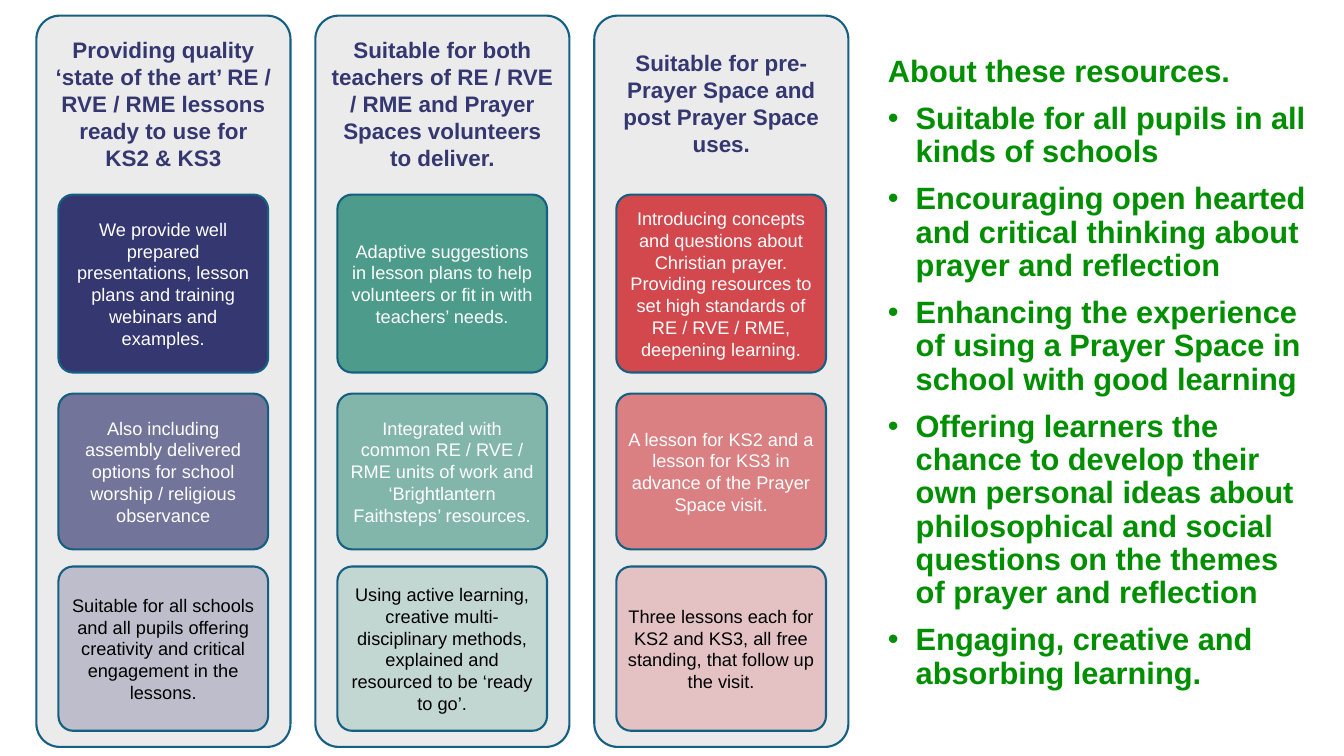
from lxml import etree
from pptx import Presentation
from pptx.dml.color import RGBColor
from pptx.enum.shapes import MSO_SHAPE as SHAPE
from pptx.enum.text import MSO_ANCHOR as ANCHOR, PP_ALIGN as ALIGN
from pptx.oxml.ns import qn
from pptx.util import Pt

NAVY = RGBColor(0x34, 0x37, 0x70)
TEAL = RGBColor(0x4D, 0x9C, 0x8B)
RED = RGBColor(0xD2, 0x48, 0x4D)
GREEN = RGBColor(0x00, 0x8F, 0x00)
PANEL = RGBColor(0xEB, 0xEB, 0xEB)
OUTLINE = RGBColor(0x15, 0x60, 0x82)
WHITE = RGBColor(0xFF, 0xFF, 0xFF)
BLACK = RGBColor(0x00, 0x00, 0x00)

FONT = "Arial"
INSET = 7.2
BULLET_INDENT = 39.6

COLUMN_LEFT, COLUMN_PITCH = 52, 398.5
COLUMN_TOP, COLUMN_W, COLUMN_H = 22.3, 363, 1044.7
CARD_W = 299.5
# Each card row: offset from the column top, height, opacity in %, text colour
CARD_ROWS = [
    (255.7, 254.2, 100, WHITE),
    (540, 222.5, 66, WHITE),
    (787, 234.7, 25, BLACK),
]

# Each column: colour, heading, heading (offset, width, height), card texts
COLUMNS = [
    (NAVY,
     "Providing quality ‘state of the art’ RE / RVE / RME lessons ready to use for\vKS2 & KS3",
     (22.3, 327, 204.5),
     ["We provide well prepared presentations, lesson plans and training webinars and examples.",
      "Also including assembly delivered options for school worship / religious observance",
      "Suitable for all schools and all pupils offering creativity and critical engagement "
      "in the lessons."]),
    (TEAL,
     "Suitable for both teachers of RE / RVE / RME and Prayer Spaces volunteers\vto deliver.",
     (22.3, 337, 204.5),
     ["Adaptive suggestions in lesson plans to help volunteers or fit in with teachers’ needs.",
      "Integrated with common RE / RVE / RME units of work and ‘Brightlantern Faithsteps’ "
      "resources.",
      "Using active learning, creative multi-disciplinary methods, explained and resourced "
      "to be ‘ready to go’."]),
    (RED,
     "Suitable for pre-Prayer Space and post Prayer Space uses.",
     (41, 327, 166.3),
     ["Introducing concepts and questions about Christian prayer. Providing resources to set "
      "high standards of RE / RVE / RME, deepening learning.",
      "A lesson for KS2 and a lesson for KS3 in advance of the Prayer Space visit.",
      "Three lessons each for KS2 and KS3, all free standing, that follow up the visit."]),
]

ABOUT_TITLE = "About these resources."
ABOUT_POINTS = [
    "Suitable for all pupils in all kinds of schools",
    "Encouraging open hearted and critical thinking about prayer and reflection",
    "Enhancing the experience of using a Prayer Space in school with good learning",
    "Offering learners the chance to develop their own personal ideas about philosophical "
    "and social questions on the themes of prayer and reflection",
    "Engaging, creative and absorbing learning.",
]


def write(p, text, size, color, bold=False, align=ALIGN.LEFT):
    p.text = text
    p.alignment = align
    for r in p.runs:
        r.font.name = FONT
        r.font.size = Pt(size)
        r.font.bold = bold
        r.font.color.rgb = color


def prepare_frame(sp, anchor=ANCHOR.TOP):
    tf = sp.text_frame
    tf.word_wrap = True
    tf.vertical_anchor = anchor
    tf.margin_left = tf.margin_right = tf.margin_top = tf.margin_bottom = Pt(INSET)
    return tf


def add_text_box(s, x, y, w, h):
    return prepare_frame(s.shapes.add_textbox(Pt(x), Pt(y), Pt(w), Pt(h)))


def add_rounded(s, x, y, w, h, radius, fill, opacity=100):
    sp = s.shapes.add_shape(SHAPE.ROUNDED_RECTANGLE, Pt(x), Pt(y), Pt(w), Pt(h))
    sp.adjustments[0] = radius / min(w, h)
    sp.shadow.inherit = False
    sp.fill.solid()
    sp.fill.fore_color.rgb = fill
    if opacity < 100:
        clr = sp.fill._xPr.find(qn("a:solidFill"))[0]
        etree.SubElement(clr, qn("a:alpha"), val=str(opacity * 1000))
    sp.line.color.rgb = OUTLINE
    sp.line.width = Pt(3)
    return sp


def add_bullet(p):
    pPr = p._p.get_or_add_pPr()
    pPr.set("marL", str(Pt(BULLET_INDENT)))
    pPr.set("indent", str(-Pt(BULLET_INDENT)))
    etree.SubElement(pPr, qn("a:buFont"), typeface=FONT)
    etree.SubElement(pPr, qn("a:buChar"), char="•")


def add_column(s, x, y, w, h, color, heading, heading_box, cards):
    add_rounded(s, x, y, w, h, 33.4, PANEL)
    dy, head_w, head_h = heading_box
    tf = add_text_box(s, x + (w - head_w) / 2, y + dy, head_w, head_h)
    write(tf.paragraphs[0], heading, 32, NAVY, bold=True, align=ALIGN.CENTER)
    for text, (dy, card_h, opacity, text_color) in zip(cards, CARD_ROWS):
        card = add_rounded(s, x + 31.5, y + dy, CARD_W, card_h, 20.9, color, opacity)
        tf = prepare_frame(card, ANCHOR.MIDDLE)
        write(tf.paragraphs[0], text, 26, text_color, align=ALIGN.CENTER)


def add_about(s, x, y, w, h):
    tf = add_text_box(s, x, y, w, h)
    p = tf.paragraphs[0]
    p.line_spacing = 0.9
    write(p, ABOUT_TITLE, 44, GREEN, bold=True)
    for point in ABOUT_POINTS:
        p = tf.add_paragraph()
        p.line_spacing = 0.9
        p.space_before = Pt(20)
        add_bullet(p)
        write(p, point, 44, GREEN, bold=True)


def main():
    prs = Presentation()
    prs.slide_width, prs.slide_height = Pt(1920), Pt(1080)
    s = prs.slides.add_slide(prs.slide_layouts[6])
    add_about(s, 1261.5, 72, 620.5, 944.5)
    for i, column in enumerate(COLUMNS):
        add_column(s, COLUMN_LEFT + i * COLUMN_PITCH, COLUMN_TOP, COLUMN_W, COLUMN_H, *column)
    prs.save("out.pptx")


if __name__ == "__main__":
    main()
